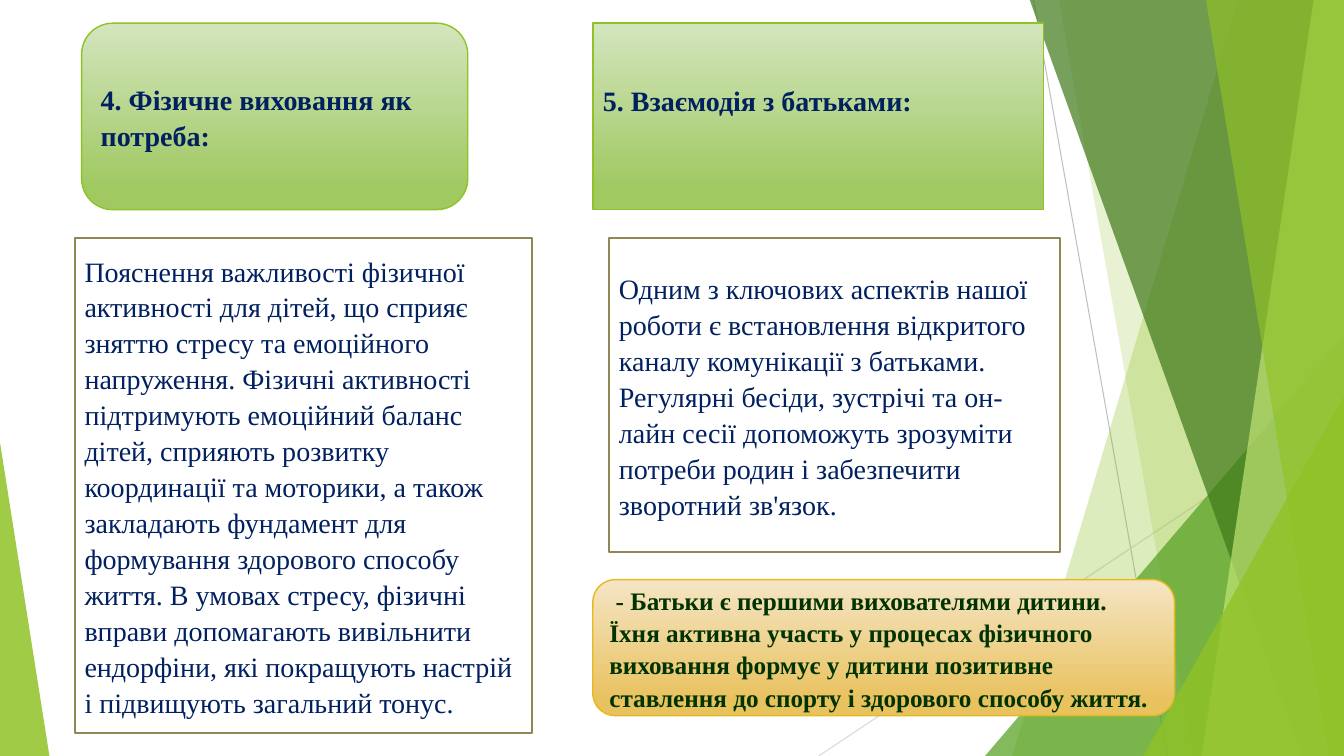
from lxml import etree
from pptx import Presentation
from pptx.dml.color import RGBColor
from pptx.enum.shapes import MSO_CONNECTOR, MSO_SHAPE
from pptx.enum.text import MSO_ANCHOR, MSO_AUTO_SIZE, PP_ALIGN
from pptx.oxml.ns import qn
from pptx.util import Inches, Pt

LINE = MSO_CONNECTOR.STRAIGHT
TRI, RECT, ROUND = MSO_SHAPE.ISOSCELES_TRIANGLE, MSO_SHAPE.RECTANGLE, MSO_SHAPE.ROUNDED_RECTANGLE
LEFT, MIDDLE, FIXED = PP_ALIGN.LEFT, MSO_ANCHOR.MIDDLE, MSO_AUTO_SIZE.NONE

HEX = {
    "green": "90C226", "leaf": "54A021", "dark": "3F7819", "lime": "C0E474",
    "pale": "D3E5BE", "moss": "A0C962", "cream": "F5E5C5", "gold": "E9C260",
    "amber": "E6B91E", "olive": "918655", "white": "FFFFFF",
    "navy": "002060", "pine": "003300", "gray": "BFBFBF", "silver": "D9D9D9",
}
RGB = {name: RGBColor.from_string(code) for name, code in HEX.items()}


def write(shape, text, size=20, color="navy", bold=False, spacing=1.07, after=8):
    frame = shape.text_frame
    frame.word_wrap = True
    frame.auto_size = FIXED
    frame.vertical_anchor = MIDDLE
    para = frame.paragraphs[0]
    para.alignment = LEFT
    para.line_spacing = spacing
    para.space_after = Pt(after)
    run = para.add_run()
    run.text = text
    run.font.name = "Times New Roman"
    run.font.size = Pt(size)
    run.font.bold = bold
    run.font.color.rgb = RGB[color]


def paint(shape, colors, edge, width=1.0):
    if len(colors) == 1:
        shape.fill.solid()
        shape.fill.fore_color.rgb = RGB[colors[0]]
    else:
        shape.fill.gradient()
        shape.fill.gradient_angle = 270
        for stop, color, pos in zip(shape.fill.gradient_stops, colors, (0, 0.88)):
            stop.color.rgb = RGB[color]
            stop.position = pos
    shape.line.color.rgb = RGB[edge]
    shape.line.width = Pt(width)


deck = Presentation()
deck.slide_width, deck.slide_height = Inches(13.33), Inches(7.5)
slide = deck.slides.add_slide(deck.slide_layouts[5])
shapes = slide.shapes

# Thin lines behind the facets
for x1, y1, x2, y2, color in [
    (10.25, 0, 11.58, 7.5, "gray"),
    (13.33, 4.03, 8.12, 7.5, "silver"),
]:
    line = shapes.add_connector(LINE, Inches(x1), Inches(y1), Inches(x2), Inches(y2))
    line.line.color.rgb = RGB[color]
    line.line.width = Pt(0.75)
    etree.SubElement(line._element.spPr, qn("a:effectLst"))

# Facets: (top x, bottom x) reaches the right edge; (box, apex) is a triangle
for form, color, alpha in [
    ((12.28, 10.04), "green", 30),
    ((10.5, 11.83), "green", 20),
    (((9.77, 3.33, 3.56, 4.17), 1), "leaf", 72),
    ((10.21, 12.91), "dark", 70),
    ((13.03, 11.92), "lime", 70),
    ((11.96, 13.18), "green", 65),
    (((11.34, 3.93, 1.99, 3.57), 1), "green", 80),
    (((0, 4.39, 0.49, 3.11), 0), "green", 85),
]:
    first, second = form
    if isinstance(first, tuple):
        facet = shapes.add_shape(TRI, *map(Inches, first))
        facet.adjustments[0] = second
    else:
        top, bottom, right = Inches(-0.01), Inches(7.5), Inches(13.33)
        path = shapes.build_freeform(Inches(first), top)
        path.add_line_segments([(right, top), (right, bottom), (Inches(second), bottom)])
        facet = path.convert_to_shape()
    facet.shadow.inherit = False
    facet.line.fill.background()
    facet.fill.solid()
    facet.fill.fore_color.rgb = RGB[color]
    tint = facet._element.spPr.find(qn("a:solidFill"))[0]
    etree.SubElement(tint, qn("a:alpha"), val=str(alpha * 1000))

# Title, raised by one line within its box
title = shapes.title
shapes._spTree.append(title._element)
title.left, title.top, title.width, title.height = map(Inches, (5.88, 0.23, 4.47, 1.85))
paint(title, ["pale", "moss"], "green")
write(title, "5. Взаємодія з батьками:", bold=True, spacing=1.0, after=0)
title.text_frame.margin_bottom = Inches(0.37)

# Left heading, two text boxes and the closing note
for kind, box, colors, edge, width, text, style in [
    (ROUND, (0.81, 0.23, 3.83, 1.85), ["pale", "moss"], "green", 1,
     "4. Фізичне виховання як потреба:", {"bold": True}),
    (RECT, (0.74, 2.36, 4.54, 4.91), ["white"], "olive", 1.5,
     "Пояснення важливості фізичної активності для дітей, що сприяє зняттю стресу "
     "та емоційного напруження. Фізичні активності підтримують емоційний баланс дітей, "
     "сприяють розвитку координації та моторики, а також закладають фундамент для "
     "формування здорового способу життя. В умовах стресу, фізичні вправи допомагають "
     "вивільнити ендорфіни, які покращують настрій і підвищують загальний тонус.", {}),
    (RECT, (6.04, 2.36, 4.47, 3.12), ["white"], "olive", 1.5,
     "Одним з ключових аспектів нашої роботи є встановлення відкритого каналу "
     "комунікації з батьками. Регулярні бесіди, зустрічі та он-лайн сесії допоможуть "
     "зрозуміти потреби родин і забезпечити зворотний зв'язок.", {}),
    (ROUND, (5.88, 5.75, 5.77, 1.35), ["cream", "gold"], "amber", 1,
     " - Батьки є першими вихователями дитини. Їхня активна участь у процесах фізичного "
     "виховання формує у дитини позитивне ставлення до спорту і здорового способу життя.",
     {"size": 18, "color": "pine", "bold": True}),
]:
    card = shapes.add_shape(kind, *map(Inches, box))
    card.shadow.inherit = False
    paint(card, colors, edge, width)
    write(card, text, **style)

deck.save("out.pptx")
